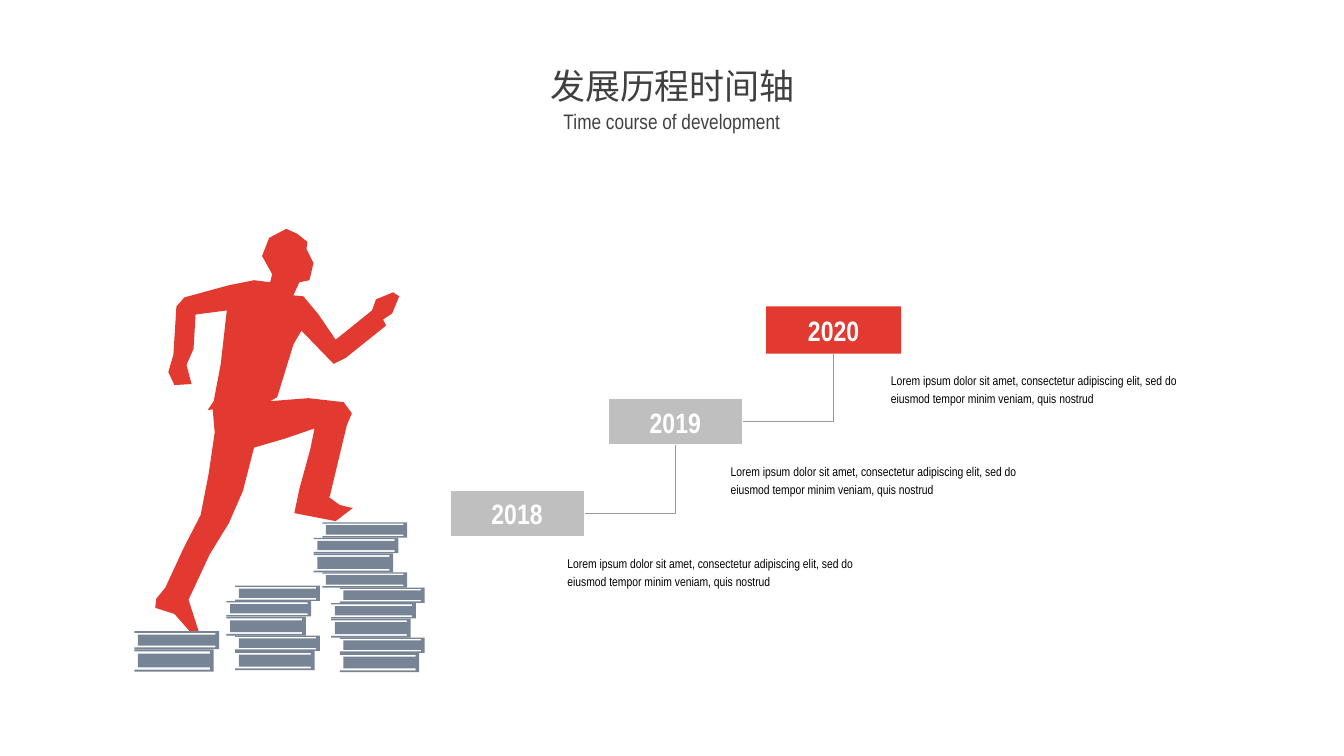
from lxml.etree import SubElement
from pptx import Presentation
from pptx.dml.color import RGBColor
from pptx.enum.shapes import MSO_CONNECTOR, MSO_SHAPE
from pptx.enum.text import MSO_ANCHOR, PP_ALIGN
from pptx.oxml.ns import qn
from pptx.util import Pt

FONT = "Arial Narrow"
RED, GREY, SLATE, WHITE = "E23931", "BFBFBF", "778495", "FFFFFF"
LOREM = ("Lorem ipsum dolor sit amet, consectetur adipiscing elit, sed do "
         "eiusmod tempor minim veniam, quis nostrud")


def color(value):
    return RGBColor.from_string(value)


def add_outline(points, fill):
    """Draw a closed polygon whose corners are given in points."""
    corners = [(round(x * 100), round(y * 100)) for x, y in points]
    builder = slide.shapes.build_freeform(*corners[0], scale=Pt(1) / 100)
    builder.add_line_segments(corners[1:], close=True)
    shape = builder.convert_to_shape()
    shape.shadow.inherit = False
    shape.fill.solid()
    shape.fill.fore_color.rgb = color(fill)
    shape.line.fill.background()


presentation = Presentation()
presentation.slide_width, presentation.slide_height = Pt(960), Pt(540)
slide = presentation.slides.add_slide(presentation.slide_layouts[6])

# Year boxes, rising to the right
boxes = []
for step, (year, fill) in enumerate([("2018", GREY), ("2019", GREY), ("2020", RED)]):
    box = slide.shapes.add_shape(MSO_SHAPE.RECTANGLE, Pt(321.1 + 113.05 * step),
                                 Pt(349.9 - 65.5 * step), Pt(96.5), Pt(33.8))
    box.shadow.inherit = False
    box.fill.solid()
    box.fill.fore_color.rgb = color(fill)
    if fill == GREY:
        box.line.color.rgb = color(WHITE)
        box.line.width = Pt(1.5)
    else:
        box.line.fill.background()
    box.text_frame.vertical_anchor = MSO_ANCHOR.MIDDLE
    paragraph = box.text_frame.paragraphs[0]
    paragraph.text = year
    paragraph.alignment = PP_ALIGN.CENTER
    paragraph.font.name, paragraph.font.size, paragraph.font.bold = FONT, Pt(20), True
    paragraph.font.color.rgb = color(WHITE)
    boxes.append(box)

# One-bend connectors from each year to the next
for lower, upper in zip(boxes, boxes[1:]):
    connector = slide.shapes.add_connector(MSO_CONNECTOR.ELBOW, 0, 0, 0, 0)
    connector.begin_connect(lower, 3)
    connector.end_connect(upper, 2)
    connector.line.color.rgb = color("999999")
    connector.line.width = Pt(0.5)
    properties = connector._element.spPr
    properties.find(qn("a:prstGeom")).set("prst", "bentConnector2")
    SubElement(properties, qn("a:effectLst"))

# Running man, in hundredths of an inch
runner = [
    # leading arm and head
    (390, 290), (373, 297), (369, 308), (333, 337), (316, 312), (301, 294), (291, 293),
    (297, 280), (307, 278), (311, 261), (304, 247), (305, 240), (295, 232), (284, 227),
    (267, 236), (260, 254), (270, 272), (268, 280),
    # shoulder and trailing arm
    (252, 278), (227, 283), (183, 295), (175, 304), (172, 352), (167, 369), (173, 382),
    (190, 381), (185, 362), (192, 346), (194, 312), (225, 308),
    # back and trailing leg
    (219, 361), (212, 398), (206, 407), (211, 406), (213, 429), (207, 470), (199, 511),
    (182, 544), (164, 583), (155, 594), (154, 603), (173, 609), (188, 626), (197, 626),
    (187, 595), (208, 550), (227, 519), (241, 487), (252, 444), (283, 435),
    # leading leg
    (312, 425), (308, 445), (297, 485), (292, 509), (333, 517), (350, 504), (337, 501),
    (322, 490), (327, 493), (344, 422), (349, 410), (341, 399), (306, 395), (268, 398),
    (275, 394), (291, 342),
    # inner side of the leading arm
    (299, 328), (331, 361), (343, 355), (383, 323), (380, 317), (389, 311), (396, 294)]
add_outline([(x * 0.72, y * 0.72) for x, y in runner], RED)

# Book stacks: each uses a run of the same pattern of (shift, is thick)
pattern = [(0, False), (-6.2, False), (-6.2, True), (0, False), (0, True)]
stacks = [(96, 450.9, pattern[3:], 1.17), (168, 418.3, pattern, 1),
          (230.3, 373.1, pattern[:4], 1), (242.8, 419.7, pattern, 1)]
spine = 2.6
for left, top, stack, scale in stacks:
    for shift, thick in stack:
        width, height, pitch = (56.7, 13.6, 13.5) if thick else (60.5, 10.9, 11.1)
        height *= scale
        inner, cover, gap = width - spine, 0.09 * height, 0.19 * height
        upper_half = [(0, 0), (0, cover), (inner, cover), (inner, gap), (spine, gap)]
        lower_half = [(x, height - y) for x, y in reversed(upper_half)]
        profile = upper_half + lower_half + [(width, height), (width, 0)]
        add_outline([(left + shift + x, top + y) for x, y in profile], SLATE)
        top += pitch * scale

# Descriptions and headings: text, left, top, width, height, size, color, alignment, spacing
texts = [(LOREM, left, top, 226, 32.4, 9, "000000", PP_ALIGN.LEFT, 1.2)
         for left, top in [(629.3, 260.6), (514.8, 325.4), (398.2, 391)]]
texts += [
    ("发展历程时间轴", 359.3, 42.5, 242, 37.4, 25, "404040", PP_ALIGN.CENTER, 1),
    ("Time course of development", 321.1, 74.2, 317.5, 25.2, 15, "404040",
     PP_ALIGN.CENTER, 1)]
for text, left, top, width, height, size, ink, alignment, spacing in texts:
    shape = slide.shapes.add_textbox(Pt(left), Pt(top), Pt(width), Pt(height))
    shape.text_frame.word_wrap = True
    paragraph = shape.text_frame.paragraphs[0]
    paragraph.text = text
    paragraph.alignment, paragraph.line_spacing = alignment, spacing
    paragraph.font.name, paragraph.font.size = FONT, Pt(size)
    paragraph.font.color.rgb = color(ink)

presentation.save("out.pptx")
